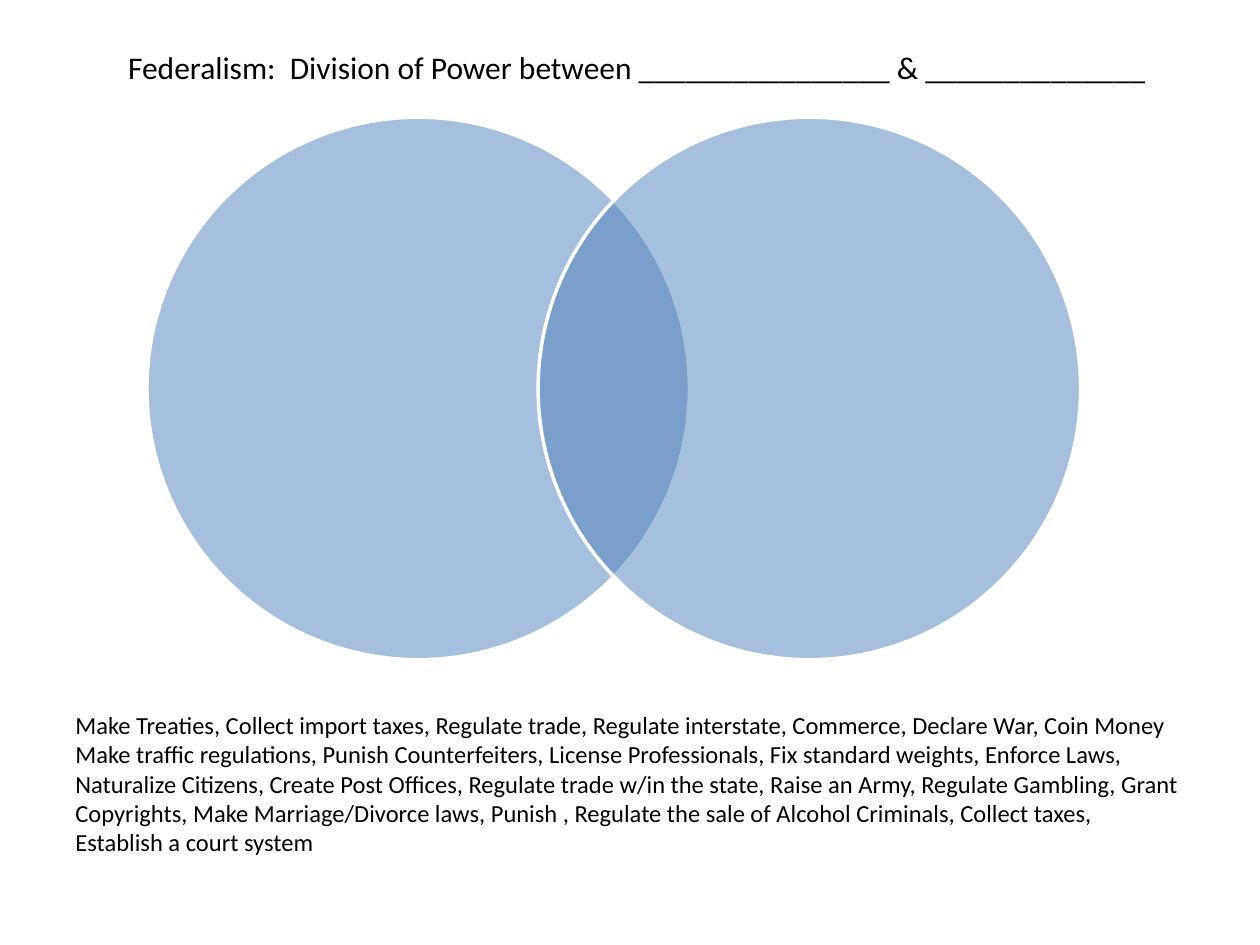
from pptx import Presentation
from pptx.dml.color import RGBColor
from pptx.enum.shapes import MSO_SHAPE
from pptx.enum.text import MSO_ANCHOR, MSO_AUTO_SIZE, PP_ALIGN
from pptx.oxml.ns import qn
from pptx.util import Pt
from lxml import etree

BLACK = RGBColor(0x00, 0x00, 0x00)
WHITE = RGBColor(0xFF, 0xFF, 0xFF)
BLUE = RGBColor(0x4F, 0x81, 0xBD)
OVAL = MSO_SHAPE.OVAL
TOP = MSO_ANCHOR.TOP
LEFT = PP_ALIGN.LEFT
FIT_SHAPE = MSO_AUTO_SIZE.SHAPE_TO_FIT_TEXT
TITLE_ONLY = 5

HEADING = "Federalism:  Division of Power between ________________ & ______________"
POWERS = (
    "Make Treaties, Collect import taxes, Regulate trade, Regulate interstate, "
    "Commerce, Declare War, Coin Money Make traffic regulations, "
    "Punish Counterfeiters, License Professionals, Fix standard weights, "
    "Enforce Laws, Naturalize Citizens, Create Post Offices, "
    "Regulate trade w/in the state, Raise an Army, Regulate Gambling, "
    "Grant Copyrights, Make Marriage/Divorce laws, Punish , "
    "Regulate the sale of Alcohol Criminals, Collect taxes, "
    "Establish a court system"
)


class SlideBuilder:
    def __init__(self, prs, font="Calibri"):
        self.s = prs.slides.add_slide(prs.slide_layouts[TITLE_ONLY])
        self.font = font

    def fill_text(self, sp, text, size):
        tf = sp.text_frame
        tf.word_wrap = True
        tf.auto_size = FIT_SHAPE
        tf.vertical_anchor = TOP
        p = tf.paragraphs[0]
        p.alignment = LEFT
        r = p.add_run()
        r.text = text
        r.font.name = self.font
        r.font.size = Pt(size)
        r.font.color.rgb = BLACK

    def title(self, x, y, w, h, text, size):
        sp = self.s.shapes.title
        sp.left, sp.top, sp.width, sp.height = Pt(x), Pt(y), Pt(w), Pt(h)
        self.fill_text(sp, text, size)

    def text(self, x, y, w, h, text, size):
        sp = self.s.shapes.add_textbox(Pt(x), Pt(y), Pt(w), Pt(h))
        self.fill_text(sp, text, size)

    def circle(self, x, y, diameter, opacity):
        """Add a see-through circle; opacity is in percent."""
        sp = self.s.shapes.add_shape(OVAL, Pt(x), Pt(y), Pt(diameter), Pt(diameter))
        sp.shadow.inherit = False
        sp.fill.solid()
        sp.fill.fore_color.rgb = BLUE
        color = sp.element.spPr.find(qn("a:solidFill"))[0]
        etree.SubElement(color, qn("a:alpha"), val=str(opacity * 1000))
        sp.line.color.rgb = WHITE
        sp.line.width = Pt(2)


def main():
    prs = Presentation()
    prs.slide_width, prs.slide_height = Pt(720), Pt(540)
    slide = SlideBuilder(prs)
    slide.title(66, 24, 618, 29, HEADING, 18)
    left, step = 84, 223.5
    for i in range(2):
        slide.circle(left + i * step, 67, 310, opacity=50)
    slide.text(36, 402, 648, 109, POWERS, 14)
    prs.save("out.pptx")


if __name__ == "__main__":
    main()
